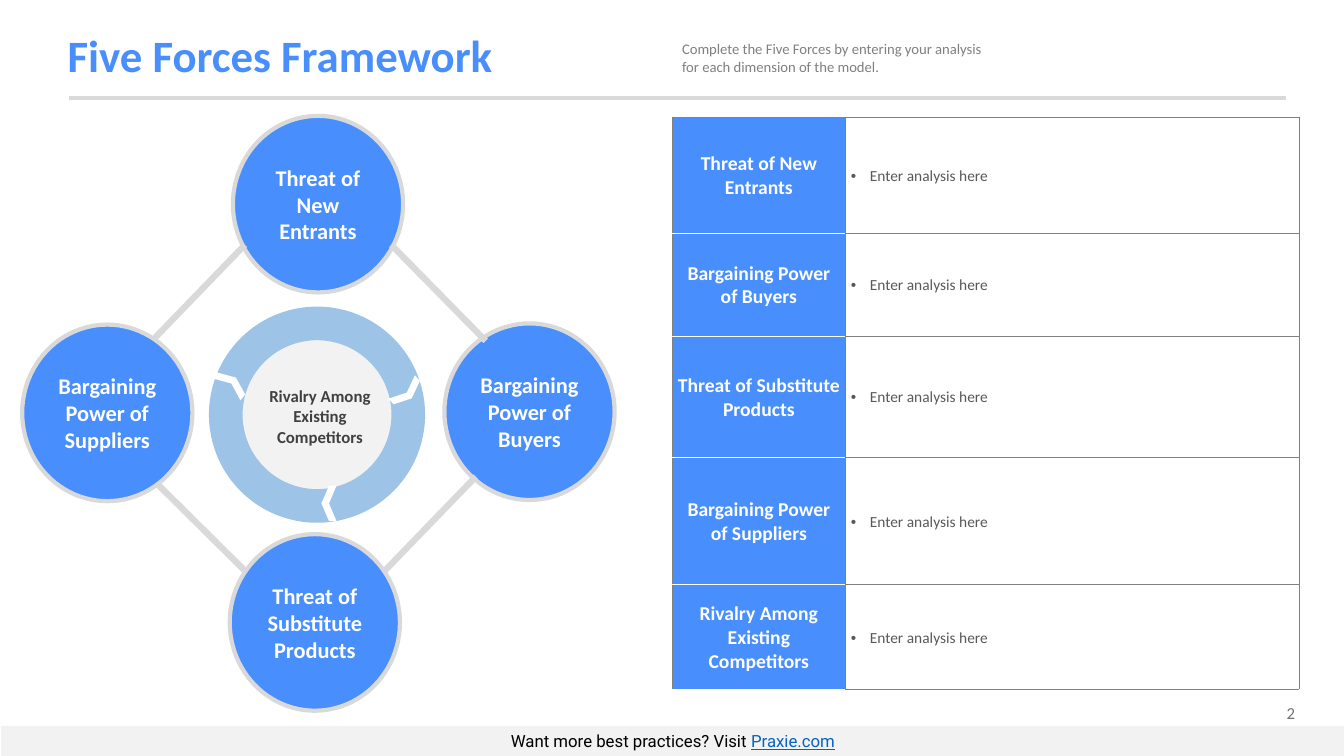
from lxml import etree
from pptx import Presentation
from pptx.dml.color import RGBColor
from pptx.enum.shapes import MSO_CONNECTOR, MSO_SHAPE
from pptx.enum.text import MSO_ANCHOR, PP_ALIGN
from pptx.oxml.ns import qn
from pptx.util import Cm, Pt

BLUE = RGBColor(0x48, 0x8E, 0xFD)
SKY = RGBColor(0x9D, 0xC3, 0xE6)
LINK = RGBColor(0x05, 0x63, 0xC1)
WHITE = RGBColor(0xFF, 0xFF, 0xFF)
BLACK = RGBColor(0x00, 0x00, 0x00)
PALE = RGBColor(0xF2, 0xF2, 0xF2)
SILVER = RGBColor(0xD9, 0xD9, 0xD9)
GRAY = RGBColor(0x80, 0x80, 0x80)
SLATE = RGBColor(0x76, 0x71, 0x71)
DARK = RGBColor(0x40, 0x40, 0x40)
BODY = RGBColor(0x59, 0x59, 0x59)

OVAL, RECT, CHEVRON = MSO_SHAPE.OVAL, MSO_SHAPE.RECTANGLE, MSO_SHAPE.CHEVRON
STRAIGHT = MSO_CONNECTOR.STRAIGHT
LEFT, CENTER, RIGHT = PP_ALIGN.LEFT, PP_ALIGN.CENTER, PP_ALIGN.RIGHT
TOP, MIDDLE = MSO_ANCHOR.TOP, MSO_ANCHOR.MIDDLE

ENTRANTS = "Threat of New Entrants"
BUYERS = "Bargaining Power of Buyers"
PRODUCTS = "Threat of Substitute Products"
SUPPLIERS = "Bargaining Power of Suppliers"
RIVALRY = "Rivalry Among Existing Competitors"


class Page:
    def __init__(self, deck, font):
        self.slide = deck.slides.add_slide(deck.slide_layouts[5])
        self.shapes = self.slide.shapes
        self.font = font

    def run(self, para, text, size, color, bold=False, font=None):
        run = para.add_run()
        run.text = text
        run.font.name = font or self.font
        run.font.size = Pt(size)
        run.font.bold = bold
        run.font.color.rgb = color
        return run

    def para(self, frame, align, anchor):
        """Set up the frame and return its first paragraph."""
        frame.word_wrap = True
        frame.vertical_anchor = anchor
        para = frame.paragraphs[0]
        para.alignment = align
        return para

    def title(self, text, box):
        title = self.shapes.title
        title.left, title.top, title.width, title.height = map(Cm, box)
        para = self.para(title.text_frame, LEFT, MIDDLE)
        para.line_spacing = 0.9
        self.run(para, text, 32, BLUE, True)

    def text(self, text, box, size, color, align=LEFT, bold=False):
        frame = self.shapes.add_textbox(*map(Cm, box)).text_frame
        self.run(self.para(frame, align, TOP), text, size, color, bold)

    def shape(self, kind, box, fill, line=None, width=0, turn=0):
        shape = self.shapes.add_shape(kind, *map(Cm, box))
        shape.shadow.inherit = False
        shape.rotation = turn
        shape.fill.solid()
        shape.fill.fore_color.rgb = fill
        if line is None:
            shape.line.fill.background()
        else:
            shape.line.color.rgb = line
            shape.line.width = Pt(width)
        return shape

    def force(self, text, left, top):
        oval = self.shape(OVAL, (left, top, 4.29, 4.45), BLUE, SILVER, 3)
        para = self.para(oval.text_frame, CENTER, MIDDLE)
        self.run(para, text, 16, WHITE, True)

    def line(self, ends, width):
        line = self.shapes.add_connector(STRAIGHT, *map(Cm, ends))
        line.line.color.rgb = SILVER
        line.line.width = Pt(width)
        etree.SubElement(line.element.spPr, qn("a:effectLst"))

    def edge(self, cell, **sides):
        props = cell._tc.get_or_add_tcPr()
        for side in "LRTB":
            line = etree.SubElement(props, qn(f"a:ln{side}"), w="3175")
            fill = etree.SubElement(line, qn("a:solidFill"))
            color = sides.get(side, GRAY)
            etree.SubElement(fill, qn("a:srgbClr"), val=str(color))

    def cell(self, cell, fill, align):
        cell.fill.solid()
        cell.fill.fore_color.rgb = fill
        cell.margin_left = cell.margin_right = Cm(0.13)
        cell.margin_top, cell.margin_bottom = Cm(0.05), Cm(0)
        cell.vertical_anchor = MIDDLE
        para = cell.text_frame.paragraphs[0]
        para.alignment = align
        return para

    def bullet(self, para):
        props = para._p.get_or_add_pPr()
        props.set("marL", str(Cm(0.48)))
        props.set("indent", str(-Cm(0.48)))
        etree.SubElement(props, qn("a:buFont"), typeface="Arial")
        etree.SubElement(props, qn("a:buChar"), char="•")

    def table(self, left, top, cols, rows):
        """Draw a two-column table; rows pairs each heading with its height."""
        size = sum(cols), sum(high for _, high in rows)
        frame = self.shapes.add_table(len(rows), 2, *map(Cm, (left, top, *size)))
        table = frame.table
        table.first_row = table.horz_banding = False
        for col, width in zip(table.columns, cols):
            col.width = Cm(width)
        for i, (name, high) in enumerate(rows):
            table.rows[i].height = Cm(high)
            head, note = table.cell(i, 0), table.cell(i, 1)
            self.edge(head, T=WHITE if i else GRAY, B=WHITE)
            self.edge(note)
            para = self.cell(head, BLUE, CENTER)
            self.run(para, name, 14, WHITE, True)
            para = self.cell(note, WHITE, LEFT)
            self.bullet(para)
            self.run(para, "Enter analysis here", 11, BODY)

    def footer(self, text, link, box):
        bar = self.shape(RECT, box, PALE)
        para = self.para(bar.text_frame, CENTER, MIDDLE)
        self.run(para, text, 12, BLACK, font="Roboto")
        self.run(para, link, 12, LINK, font="Roboto").font.underline = True


def main():
    deck = Presentation()
    deck.slide_width, deck.slide_height = Cm(33.87), Cm(19.05)
    page = Page(deck, "Calibri")

    page.text("2", (30.3, 17.58, 2.59, 0.76), 12, SLATE, RIGHT)
    page.line((1.73, 2.46, 32.41, 2.46), 3)
    page.title("Five Forces Framework", (1.45, 0.48, 27.79, 1.96))
    page.footer("Want more best practices? Visit ", "Praxie.com",
                (0.03, 18.29, 33.86, 0.76))

    page.shape(OVAL, (5.69, 8.15, 4.6, 4.6), PALE, SKY, 24)
    for name, left, top in ((ENTRANTS, 5.87, 2.92), (BUYERS, 11.2, 8.15),
                            (SUPPLIERS, 0.56, 8.18), (PRODUCTS, 5.79, 13.46)):
        page.force(name, left, top)
    for left, top, turn in ((10.06, 9.45, 48.4), (8.1, 12.24, 180),
                            (5.64, 9.22, 308.4)):
        page.shape(CHEVRON, (left, top, 0.38, 0.89), WHITE, turn=turn)
    page.text(RIVALRY, (6.12, 9.6, 3.89, 2.31), 12, DARK, CENTER, True)
    for ends in ((3.86, 8.56, 6.17, 6.17), (9.86, 6.17, 12.24, 8.59),
                 (3.96, 12.19, 6.17, 14.38), (9.68, 14.4, 11.99, 12.01)):
        page.line(ends, 4.5)

    page.table(16.94, 2.95, (4.37, 11.43),
               ((ENTRANTS, 2.92), (BUYERS, 2.59), (PRODUCTS, 3.07),
                (SUPPLIERS, 3.2), (RIVALRY, 2.64)))
    page.text("Complete the Five Forces by entering your analysis "
              "for each dimension of the model.",
              (16.94, 0.89, 8.33, 1.14), 10.5, GRAY)
    deck.save("out.pptx")


if __name__ == "__main__":
    main()
